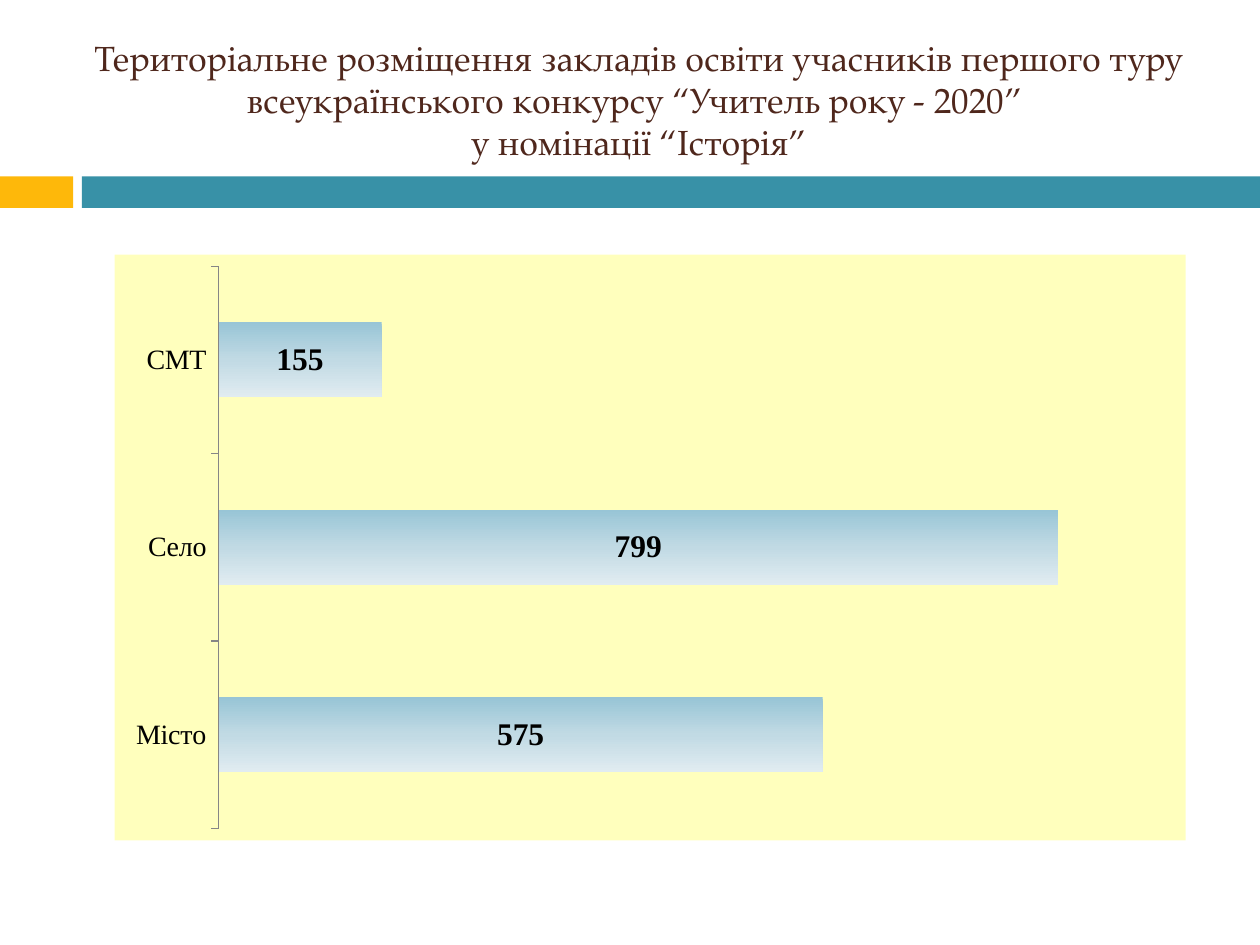
"""Builds a slide with a bar chart of contest schools by settlement type."""
from pptx import Presentation
from pptx.chart.data import CategoryChartData
from pptx.dml.color import RGBColor as Rgb
from pptx.enum.chart import XL_CHART_TYPE as ChartType
from pptx.enum.chart import XL_LABEL_POSITION as LabelPos
from pptx.enum.chart import XL_TICK_LABEL_POSITION as TickLabelPos
from pptx.enum.chart import XL_TICK_MARK as TickMark
from pptx.enum.shapes import MSO_SHAPE as Shape
from pptx.enum.text import MSO_ANCHOR as Anchor
from pptx.enum.text import MSO_AUTO_SIZE as AutoSize
from pptx.enum.text import PP_ALIGN as Align
from pptx.oxml import parse_xml
from pptx.oxml.ns import nsdecls
from pptx.util import Inches, Pt

HEADING = (
    "Територіальне розміщення закладів освіти учасників першого туру "
    "всеукраїнського конкурсу “Учитель року - 2020” \vу номінації “Історія”"
)
SCHOOLS = {"Місто": 575, "Село": 799, "СМТ": 155}

THEME = {
    "title": {"name": "TeX Gyre Pagella", "size": 20, "color": "4F271C", "bold": False},
    "chart": {"name": "Calibri", "size": 10, "color": "000000"},
    "category": {"name": "Times New Roman", "size": 16, "color": "000000"},
    "value": {"name": "Times New Roman", "size": 18, "color": "000000", "bold": True},
    "accent": "FEB80A",
    "band": "3891A7",
    "axis": "868686",
    "panel": ("FFFF00", 26),
    "bar": ((0, "98C5D6"), (50, "C1DAE4"), (100, "E1ECF1")),
}
SLIDE_W, SLIDE_H = 10, 7.5
BAND_TOP, BAND_H = 1.4, 0.25
ACCENT_W, BAND_LEFT = 0.58, 0.65
TITLE_BOX = (0.55, 0.25, 9.04, 1.08)
CHART_BOX = (0.91, 2.02, 8.5, 4.65)


def inches(box):
    return [Inches(length) for length in box]


def set_all(target, values):
    for key, value in values.items():
        setattr(target, key, value)


def style_font(font, style):
    values = {**style, "size": Pt(style["size"])}
    font.color.rgb = Rgb.from_string(values.pop("color"))
    set_all(font, values)


def add_band(slide, left, width, color):
    band = slide.shapes.add_shape(
        Shape.RECTANGLE, *inches((left, BAND_TOP, width, BAND_H))
    )
    band.shadow.inherit = False
    band.fill.solid()
    band.fill.fore_color.rgb = Rgb.from_string(color)
    band.line.fill.background()


def add_heading(slide):
    title = slide.shapes.title
    set_all(title, dict(zip(("left", "top", "width", "height"), inches(TITLE_BOX))))
    frame = title.text_frame
    frame.text = HEADING
    set_all(frame, {
        "word_wrap": True,
        "auto_size": AutoSize.NONE,
        "vertical_anchor": Anchor.MIDDLE,
    })
    heading = frame.paragraphs[0]
    heading.alignment = Align.CENTER
    for run in heading.runs:
        style_font(run.font, THEME["title"])


def fill_panel(chart):
    color, opacity = THEME["panel"]
    panel = parse_xml(
        f'<c:spPr {nsdecls("c", "a")}><a:solidFill><a:srgbClr val="{color}">'
        f'<a:alpha val="{opacity * 1000}"/></a:srgbClr></a:solidFill>'
        "<a:ln><a:noFill/></a:ln></c:spPr>"
    )
    chart.element.chart.addnext(panel)


def fill_bars(series):
    stops = "".join(
        f'<a:gs pos="{position * 1000}"><a:srgbClr val="{color}"/></a:gs>'
        for position, color in THEME["bar"]
    )
    gradient = parse_xml(
        f'<a:gradFill {nsdecls("a")} rotWithShape="1"><a:gsLst>{stops}</a:gsLst>'
        '<a:lin ang="5400000" scaled="0"/></a:gradFill>'
    )
    series._element.get_or_add_spPr().insert(0, gradient)


def add_school_chart(slide):
    data = CategoryChartData()
    data.categories = list(SCHOOLS)
    data.add_series("Series 1", list(SCHOOLS.values()))
    chart = slide.shapes.add_chart(
        ChartType.BAR_STACKED, *inches(CHART_BOX), data
    ).chart
    set_all(chart, {"has_legend": False, "has_title": False})
    style_font(chart.font, THEME["chart"])
    fill_panel(chart)

    set_all(chart.value_axis, {
        "visible": False,
        "has_major_gridlines": False,
        "minimum_scale": 0,
        "maximum_scale": 900,
    })
    settlements = chart.category_axis
    set_all(settlements, {
        "major_tick_mark": TickMark.OUTSIDE,
        "minor_tick_mark": TickMark.NONE,
        "tick_label_position": TickLabelPos.NEXT_TO_AXIS,
    })
    settlements.format.line.color.rgb = Rgb.from_string(THEME["axis"])
    style_font(settlements.tick_labels.font, THEME["category"])

    plot = chart.plots[0]
    set_all(plot, {"gap_width": 150, "overlap": 100, "vary_by_categories": False})
    schools = plot.series[0]
    fill_bars(schools)
    labels = schools.data_labels
    set_all(labels, {"show_value": True, "position": LabelPos.CENTER})
    style_font(labels.font, THEME["value"])


def main():
    deck = Presentation()
    set_all(deck, {"slide_width": Inches(SLIDE_W), "slide_height": Inches(SLIDE_H)})
    slide = deck.slides.add_slide(deck.slide_layouts[5])
    add_band(slide, 0, ACCENT_W, THEME["accent"])
    add_band(slide, BAND_LEFT, SLIDE_W - BAND_LEFT, THEME["band"])
    add_heading(slide)
    add_school_chart(slide)
    deck.save("out.pptx")


if __name__ == "__main__":
    main()
